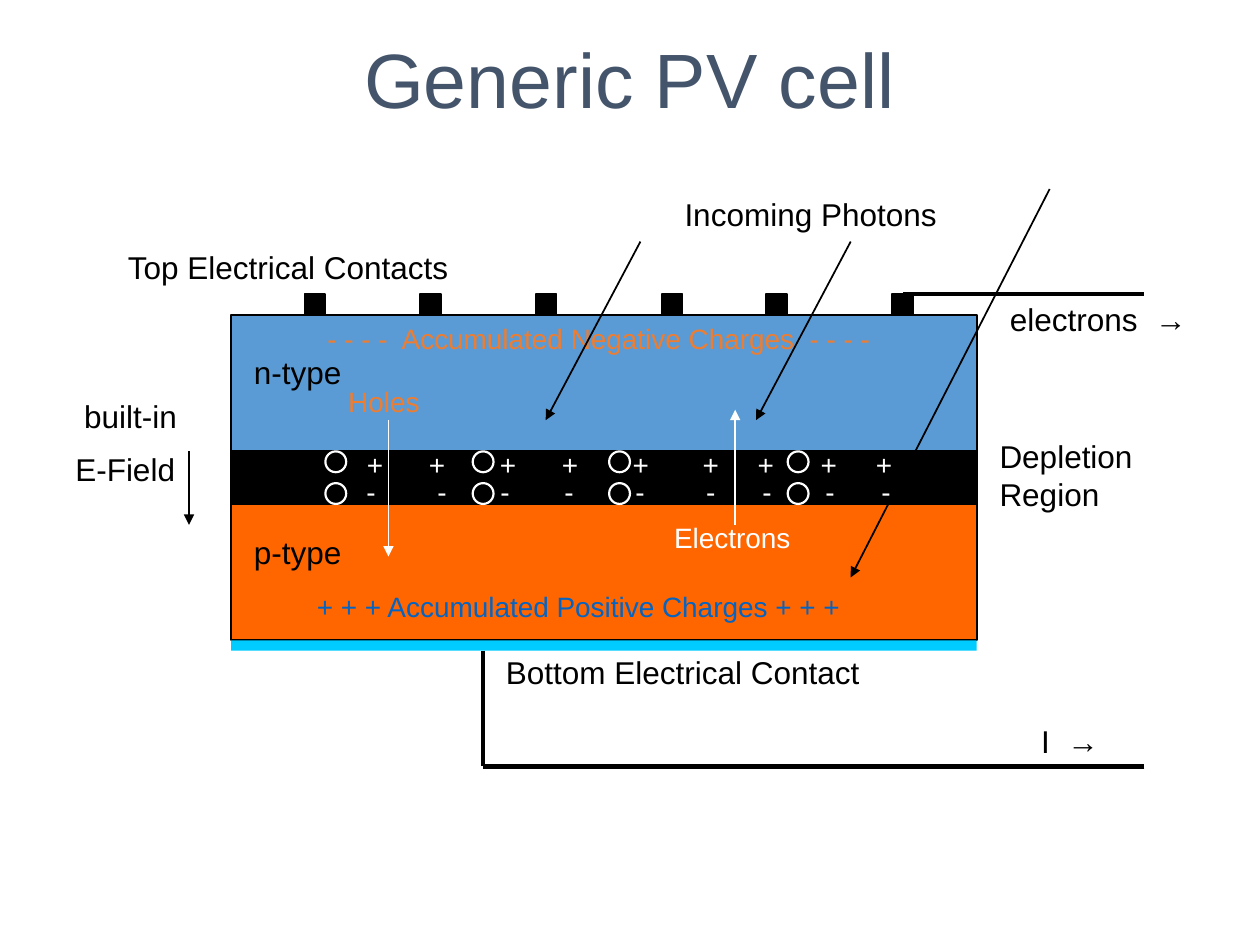
from lxml.etree import SubElement
from pptx import Presentation
from pptx.dml.color import RGBColor
from pptx.enum.shapes import MSO_CONNECTOR, MSO_SHAPE
from pptx.enum.text import MSO_ANCHOR, MSO_AUTO_SIZE, PP_ALIGN
from pptx.oxml.ns import qn
from pptx.util import Cm, Pt

HUES = {
    "black": "000000", "white": "FFFFFF", "slate": "44546A",
    "blue": "5B9BD5", "flame": "FF6600", "cyan": "00CCFF",
    "orange": "ED7D31", "link": "0563C1",
}
FRAME = {"word_wrap": True, "auto_size": MSO_AUTO_SIZE.SHAPE_TO_FIT_TEXT}
TITLE = {"word_wrap": True, "auto_size": MSO_AUTO_SIZE.NONE,
         "vertical_anchor": MSO_ANCHOR.MIDDLE}
PLUS = (0.32, 1.57, 3, 4.25, 5.68, 7.09, 8.2, 9.47, 10.58)
MINUS = (0.24, 1.67, 2.94, 4.23, 5.66, 7.09, 8.22, 9.49, 10.62)


def apply(item, values):
    for name, value in values.items():
        setattr(item, name, value)


def rgb(hue):
    return RGBColor.from_string(HUES[hue])


def style(part, size, hue):
    apply(part.font, {"name": "Arial", "size": Pt(size)})
    part.font.color.rgb = rgb(hue)


def label(slide, box, x, y, wide, text, size=18, hue="black", high=1.02):
    left, top = box[:2]
    area = slide.shapes.add_textbox(Cm(left + x), Cm(top + y), Cm(wide), Cm(high))
    frame = area.text_frame
    apply(frame, FRAME)
    frame.text = text
    for para in frame.paragraphs:
        style(para.runs[0], size, hue)
    for para in frame.paragraphs[1:]:
        para.space_before = Pt(size / 2)
    return frame


def block(slide, box, x, y, wide, high, fill=None, edge=None, width=1,
          kind=MSO_SHAPE.RECTANGLE):
    left, top = box[:2]
    shape = slide.shapes.add_shape(
        kind, Cm(left + x), Cm(top + y), Cm(wide), Cm(high))
    shape.shadow.inherit = False
    if fill:
        shape.fill.solid()
        shape.fill.fore_color.rgb = rgb(fill)
    else:
        shape.fill.background()
    if edge:
        shape.line.color.rgb = rgb(edge)
        shape.line.width = Pt(width)
    else:
        shape.line.fill.background()
    return shape


def wire(slide, box, ends, hue="black", width=1.0, head=False):
    left, top = box[:2]
    x, y, to_x, to_y = ends
    link = slide.shapes.add_connector(
        MSO_CONNECTOR.STRAIGHT, Cm(left + x), Cm(top + y),
        Cm(left + to_x), Cm(top + to_y))
    link.line.color.rgb = rgb(hue)
    link.line.width = Pt(width)
    if head:
        SubElement(link.line._get_or_add_ln(), qn("a:tailEnd"), type="triangle")
    SubElement(link._element.spPr, qn("a:effectLst"))
    return link


def head_line(slide, box):
    title = slide.shapes.title
    apply(title, dict(zip(("left", "top", "width", "height"), map(Cm, box))))
    frame = title.text_frame
    frame.text = "Generic PV cell"
    apply(frame, TITLE)
    para = frame.paragraphs[0]
    para.alignment = PP_ALIGN.CENTER
    style(para.runs[0], 44, "slate")


def cell(slide, box):
    wide, high = box[2:]
    layer = 2.75
    block(slide, box, 0, 0, wide, layer, "blue", "black")
    block(slide, box, 0, high - layer, wide, layer, "flame", "black")
    block(slide, box, 0, layer, wide, high - 2 * layer, "black", "black")
    block(slide, box, 0, high, wide, 0.21, "cyan")
    pads = [block(slide, box, x, -0.42, 0.42, 0.42, "black", "black")
            for x in (1.48, 3.81, 6.14, 8.68, 10.79, 13.33)]
    label(slide, box, 0.21, 0.64, 2.54, "n-type")
    label(slide, box, 0.21, 4.27, 2.54, "p-type")
    label(slide, box, 1.69, 0, 11.85,
          "- - - -  Accumulated Negative Charges  - - - -", 16, "orange", 0.94)
    label(slide, box, 1.48, 5.41, 11.85,
          "+ + + Accumulated Positive Charges + + +", 16, "link", 0.94)
    label(slide, box, -2.33, -1.48, 10.8, "Top Electrical Contacts")
    label(slide, box, 5.29, 6.68, 10.8, "Bottom Electrical Contact")
    label(slide, box, 15.24, 2.33, 4.23, "Depletion Region", high=1.78)
    return pads[-1]


def junction(slide, box):
    for x in (1.9, 4.87, 7.62, 11.22):
        for y in (0, box[3] - 0.42):
            block(slide, box, x, y, 0.42, 0.42, None, "white", 1.25,
                  MSO_SHAPE.OVAL)
    for sign, y, stops in (("+", -0.21, PLUS), ("-", 0.35, MINUS)):
        frame = label(slide, box, 2.33, y, 11.85, ("\t" + sign) * len(stops),
                      16, "white", 0.94)
        props = frame.paragraphs[0]._p.get_or_add_pPr()
        tabs = SubElement(props, qn("a:tabLst"))
        for stop in stops:
            SubElement(tabs, qn("a:tab"), pos=str(int(Cm(stop))), algn="ctr")
    wire(slide, box, (3.17, -0.63, 3.17, 2.12), "white", head=True)
    wire(slide, box, (10.16, 1.48, 10.16, -0.84), "white", head=True)
    label(slide, box, 2.11, -1.48, 3.39, "Holes", 16, "orange", 0.94)
    label(slide, box, 8.68, 1.27, 3.39, "Electrons", 16, "white", 0.94)


def photons(slide, box):
    wide, high = box[2:]
    for ends in ((1.91, 1.06, 0, 4.66), (6.15, 1.06, 4.24, 4.66),
                 (wide, 0, 6.15, high)):
        wire(slide, box, ends, head=True)
    label(slide, box, 2.55, 0, 7.41, "Incoming Photons")


def field(slide, box):
    wide, high = box[2:]
    label(slide, box, 0, 0, wide, " built-in\nE-Field", high=high)
    wire(slide, box, (2.54, 1.23, 2.54, 2.71), head=True)


def circuit(slide, box, pad):
    wide, high = box[2:]
    wire(slide, box, (0, 7.19, 0, high), width=2.5)
    wire(slide, box, (wide, high, 0, high), width=2.5)
    lead = wire(slide, box, (8.46, 0, wide, 0), width=2.5)
    lead.begin_connect(pad, 0)
    label(slide, box, 10.37, 0, 4.23, "electrons  →")
    label(slide, box, 11, 8.5, 2.33, "I  →")


def main():
    deck = Presentation()
    apply(deck, {"slide_width": Cm(25.4), "slide_height": Cm(19.05)})
    slide = deck.slides.add_slide(deck.slide_layouts[5])
    head_line(slide, (1.9, 0.84, 21.59, 1.47))
    pad = cell(slide, (4.66, 6.35, 15.03, 6.56))
    junction(slide, (4.66, 9.1, 15.03, 1.06))
    photons(slide, (11, 3.81, 10.16, 7.83))
    field(slide, (1.27, 7.87, 3.39, 2.16))
    circuit(slide, (9.74, 5.93, 13.33, 9.52), pad)
    deck.save("out.pptx")


if __name__ == "__main__":
    main()
